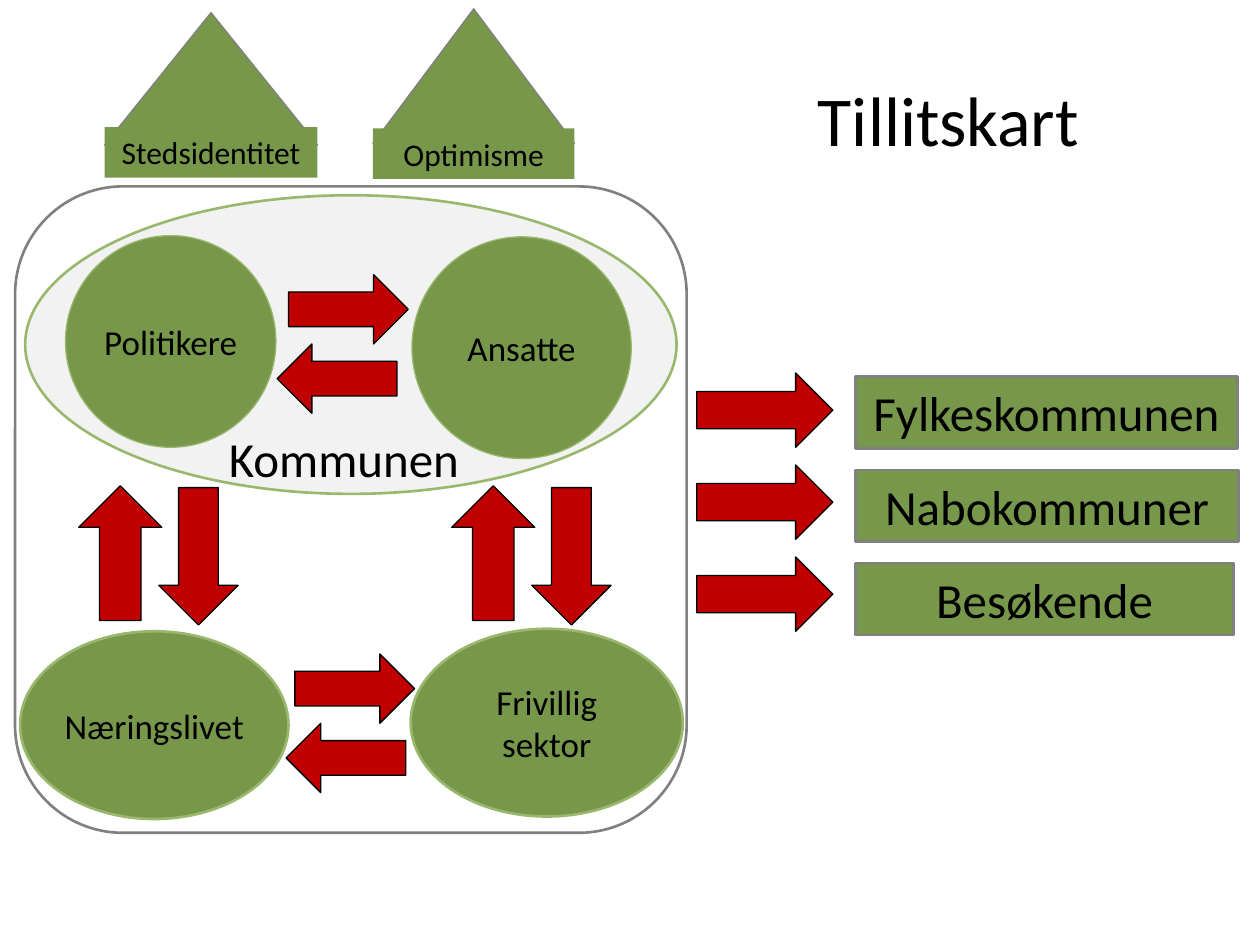
from pptx import Presentation
from pptx.dml.color import RGBColor
from pptx.enum.shapes import MSO_SHAPE
from pptx.enum.text import MSO_ANCHOR, PP_ALIGN
from pptx.util import Inches, Pt

GREEN = RGBColor(0x77, 0x97, 0x4A)
LIGHT_GREEN = RGBColor(0x99, 0xB8, 0x6E)
RED = RGBColor(0xC0, 0x00, 0x00)
GREY = RGBColor(0x80, 0x80, 0x80)
PALE = RGBColor(0xF2, 0xF2, 0xF2)
WHITE = RGBColor(0xFF, 0xFF, 0xFF)
BLACK = RGBColor(0x00, 0x00, 0x00)

RIGHT, DOWN, LEFT, UP = 0, 90, 180, 270


def write(sp, text, size=20, anchor=MSO_ANCHOR.TOP, inset=(0.1, 0.05)):
    tf = sp.text_frame
    tf.word_wrap = True
    tf.vertical_anchor = anchor
    tf.margin_left = tf.margin_right = Inches(inset[0])
    tf.margin_top = tf.margin_bottom = Inches(inset[1])
    p = tf.paragraphs[0]
    p.alignment = PP_ALIGN.CENTER
    r = p.add_run()
    r.text = text
    r.font.name = "Calibri"
    r.font.size = Pt(size)
    r.font.color.rgb = BLACK


def add_shape(slide, kind, box, fill=GREEN, line=None, width=0.75):
    sp = slide.shapes.add_shape(kind, *map(Inches, box))
    sp.shadow.inherit = False
    sp.fill.solid()
    sp.fill.fore_color.rgb = fill
    if line is None:
        sp.line.fill.background()
    else:
        sp.line.color.rgb = line
        sp.line.width = Pt(width)
    return sp


def add_label(slide, box, text, size):
    write(slide.shapes.add_textbox(*map(Inches, box)), text, size=size)


def add_arrow(slide, box, direction=RIGHT):
    sp = add_shape(slide, MSO_SHAPE.RIGHT_ARROW, box, RED, BLACK)
    sp.rotation = direction


def add_actor(slide, box, text, width):
    sp = add_shape(slide, MSO_SHAPE.OVAL, box, GREEN, LIGHT_GREEN, width)
    write(sp, text, anchor=MSO_ANCHOR.MIDDLE, inset=(0.04, 0))


def add_horizontal_pair(slide, x, y, shift):
    """Right arrow with a left arrow below it, moved back by shift."""
    w, h = 0.95, 0.55
    add_arrow(slide, (x, y, w, h))
    add_arrow(slide, (x - shift, y + h, w, h), LEFT)


def add_vertical_pair(slide, x, y):
    """Up arrow with a down arrow to its right."""
    add_arrow(slide, (x, y, 1.07, 0.66), UP)
    add_arrow(slide, (x + 0.61, y + 0.04, 1.09, 0.63), DOWN)


def add_roof(slide, box, text, label_y):
    """Triangle whose foot is covered by a label."""
    x, y, w, h = box
    add_shape(slide, MSO_SHAPE.ISOSCELES_TRIANGLE, box, GREEN, GREY)
    write(add_shape(slide, MSO_SHAPE.RECTANGLE, (x, label_y, w, 0.4)), text, size=18)


def add_municipality(slide, box):
    x, y, w, h = box
    add_shape(slide, MSO_SHAPE.ROUNDED_RECTANGLE, box, WHITE, GREY, 1.5)

    # Municipal organisation
    add_shape(slide, MSO_SHAPE.OVAL, (x + 0.08, y + 0.07, 5.17, 2.37),
              PALE, LIGHT_GREEN, 1.5)
    add_actor(slide, (x + 0.4, y + 0.39, 1.67, 1.68), "Politikere", 0.75)
    add_actor(slide, (x + 3.15, y + 0.4, 1.74, 1.76), "Ansatte", 0.75)
    add_label(slide, (x + 1.44, y + 1.87, 2.34, 0.57), "Kommunen", 28)

    # Business and voluntary sector
    add_actor(slide, (x + 0.04, y + 3.53, 2.13, 1.49), "Næringslivet", 1.5)
    add_actor(slide, (x + 3.14, y + 3.51, 2.16, 1.49), "Frivillig sektor", 1.5)

    # Mutual trust arrows
    add_horizontal_pair(slide, x + 2.17, y + 0.7, 0.09)
    add_horizontal_pair(slide, x + 2.22, y + 3.71, 0.07)
    for dx in (0.3, 3.26):
        add_vertical_pair(slide, x + dx, y + 2.58)


def add_partners(slide, box):
    """Outside partners, each with an arrow leading to it."""
    x, y, w, h = box
    partners = [("Fylkeskommunen", 3.03), ("Nabokommuner", 3.04), ("Besøkende", 3)]
    for i, (name, width) in enumerate(partners):
        add_arrow(slide, (x, y + i * 0.73, 1.08, 0.59))
        sp = add_shape(slide, MSO_SHAPE.RECTANGLE,
                       (x + 1.26, y + 0.03 + i * 0.74, width, 0.57), GREEN, GREY, 1.5)
        write(sp, name, size=28)


def main():
    prs = Presentation()
    prs.slide_width, prs.slide_height = Inches(10), Inches(7.5)
    slide = prs.slides.add_slide(prs.slide_layouts[6])

    add_municipality(slide, (0.12, 1.48, 5.33, 5.13))
    add_roof(slide, (0.83, 0.1, 1.69, 1.05), "Stedsidentitet", 1.01)
    add_roof(slide, (2.96, 0.07, 1.6, 1.07), "Optimisme", 1.02)
    add_partners(slide, (5.53, 2.96, 4.3, 2.08))
    add_label(slide, (5.69, 0.56, 3.8, 1.45), "Tillitskart ", 40)

    prs.save("out.pptx")


if __name__ == "__main__":
    main()
